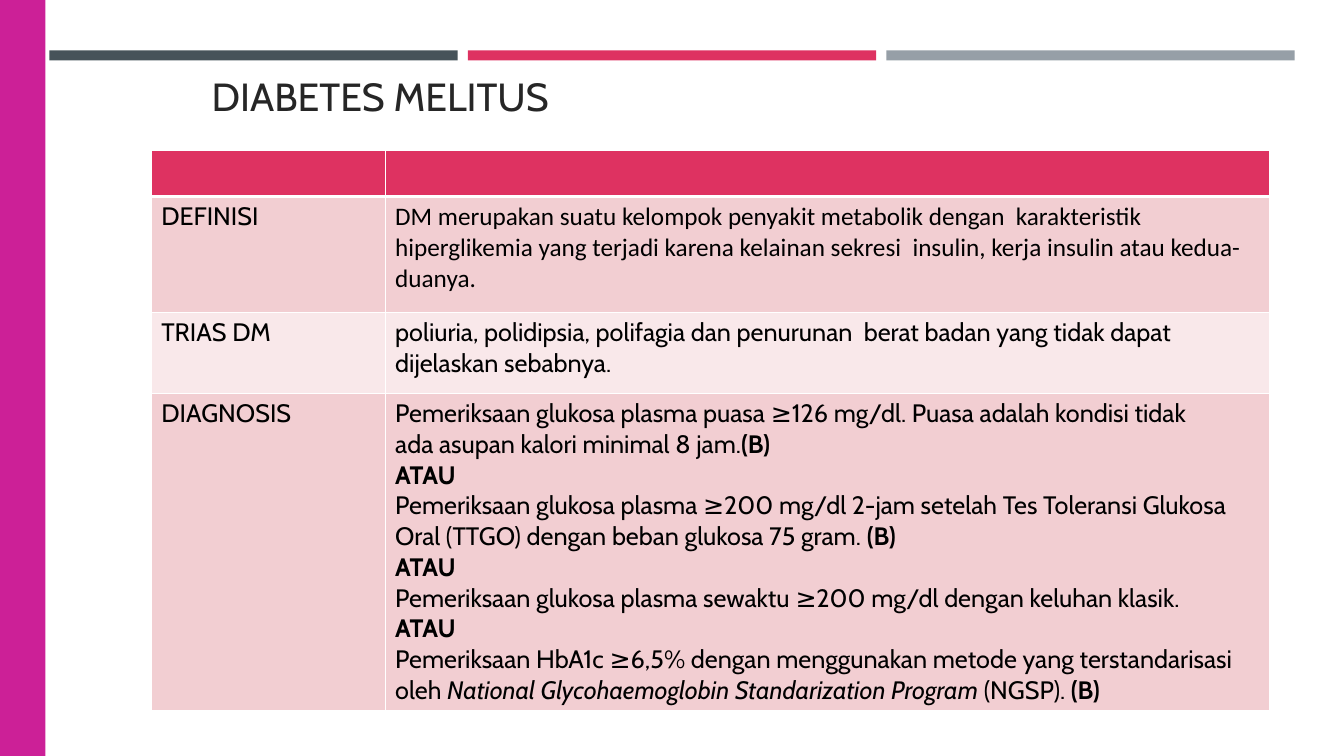
from pptx import Presentation
from pptx.dml.color import RGBColor
from pptx.enum.shapes import MSO_SHAPE as Shape
from pptx.enum.text import MSO_ANCHOR as Anchor, MSO_AUTO_SIZE as AutoSize, PP_ALIGN as Align
from pptx.oxml import parse_xml
from pptx.oxml.ns import nsdecls
from pptx.util import Inches, Pt

SLATE = RGBColor(0x46, 0x53, 0x59)
CRIMSON = RGBColor(0xDE, 0x32, 0x61)
GRAY = RGBColor(0x96, 0x9F, 0xA7)
MAGENTA = RGBColor(0xCC, 0x20, 0x97)
CHARCOAL = RGBColor(0x26, 0x26, 0x26)
BLACK = RGBColor(0, 0, 0)
ROSE = RGBColor(0xF2, 0xCE, 0xD2)
BLUSH = RGBColor(0xF9, 0xE8, 0xEA)

BOLD = {"bold": True}
ITALIC = {"italic": True}
CABIN = {"name": "Cabin", "size": Pt(18)}
CALIBRI = {"name": "Calibri", "size": Pt(18)}

COLUMN_WIDTHS = (2.32, 8.77)
ROW_HEIGHTS = (0.46, 1.15, 0.8, 3.15)
ROW_FILLS = (CRIMSON, ROSE, BLUSH, ROSE)

DEFINITION = [[(
    "DM merupakan suatu kelompok penyakit metabolik dengan  karakteristik "
    "hiperglikemia yang terjadi karena kelainan sekresi  insulin, kerja insulin "
    "atau kedua-duanya.", CALIBRI)]]
TRIAD = [[(
    "poliuria, polidipsia, polifagia dan penurunan  berat badan yang tidak dapat "
    "dijelaskan sebabnya.", {})]]
DIAGNOSIS = [
    [("Pemeriksaan glukosa plasma puasa ≥126 mg/dl. Puasa adalah kondisi tidak \n"
      "ada asupan kalori minimal 8 jam.", {}), ("(B)", BOLD)],
    [("ATAU", BOLD)],
    [("Pemeriksaan glukosa plasma ≥200 mg/dl 2-jam setelah Tes Toleransi Glukosa \n"
      "Oral (TTGO) dengan beban glukosa 75 gram. ", {}), ("(B) \nATAU", BOLD)],
    [("Pemeriksaan glukosa plasma sewaktu ≥200 mg/dl dengan keluhan klasik. \n", {}),
     ("ATAU", BOLD)],
    [("Pemeriksaan HbA1c ≥6,5% dengan menggunakan metode yang terstandarisasi \noleh ", {}),
     ("National Glycohaemoglobin Standarization Program ", ITALIC),
     ("(NGSP). ", {}), ("(B)", BOLD)],
]
ROWS = [
    ("DEFINISI", DEFINITION),
    ("TRIAS DM", TRIAD),
    ("DIAGNOSIS", DIAGNOSIS),
]


def apply_format(target, values):
    for name, value in values.items():
        setattr(target, name, value)


def add_bar(page, left, top, width, height, color):
    bar = page.shapes.add_shape(
        Shape.RECTANGLE, Inches(left), Inches(top), Inches(width), Inches(height))
    bar.shadow.inherit = False
    bar.fill.solid()
    bar.fill.fore_color.rgb = color
    bar.line.fill.background()


def set_title(page, text):
    title = page.shapes.title
    apply_format(title, {"left": Inches(2), "top": Inches(0.7),
                         "width": Inches(10.92), "height": Inches(0.79)})
    frame = title.text_frame
    apply_format(frame, {"text": text, "auto_size": AutoSize.NONE,
                         "vertical_anchor": Anchor.TOP, "margin_top": Inches(0.07)})
    para = frame.paragraphs[0]
    apply_format(para, {"alignment": Align.LEFT, "line_spacing": 0.9})
    apply_format(para.font, {"name": "Cabin", "size": Pt(28)})
    para.font.color.rgb = CHARCOAL


def add_span(para, text, style):
    for index, line in enumerate(text.split("\n")):
        if index:
            para.add_line_break()
        if line:
            span = para.add_run()
            span.text = line
            apply_format(span.font, {**CABIN, **style})
            span.font.color.rgb = BLACK


def write_cell(cell, paragraphs):
    frame = cell.text_frame
    for index, spans in enumerate(paragraphs):
        para = frame.add_paragraph() if index else frame.paragraphs[0]
        for text, style in spans:
            add_span(para, text, style)


def style_cell(cell, color, top, bottom):
    properties = cell._tc.get_or_add_tcPr()
    for side, width in (("L", 1), ("R", 1), ("T", top), ("B", bottom)):
        properties.append(parse_xml(
            f'<a:ln{side} {nsdecls("a")} w="{Pt(width)}"><a:solidFill>'
            f'<a:srgbClr val="FFFFFF"/></a:solidFill></a:ln{side}>'))
    cell.fill.solid()
    cell.fill.fore_color.rgb = color


def add_diabetes_table(page):
    table = page.shapes.add_table(
        len(ROW_HEIGHTS), len(COLUMN_WIDTHS), Inches(1.5), Inches(1.49),
        Inches(sum(COLUMN_WIDTHS)), Inches(sum(ROW_HEIGHTS))).table
    for column, width in zip(table.columns, COLUMN_WIDTHS):
        column.width = Inches(width)
    for index, (row, height, color) in enumerate(zip(table.rows, ROW_HEIGHTS, ROW_FILLS)):
        row.height = Inches(height)
        for cell in row.cells:
            style_cell(cell, color, 3 if index == 1 else 1, 3 if index == 0 else 1)
    for index, (label, paragraphs) in enumerate(ROWS, 1):
        write_cell(table.cell(index, 0), [[(label, {})]])
        write_cell(table.cell(index, 1), paragraphs)


def main():
    deck = Presentation()
    apply_format(deck, {"slide_width": Inches(13.33), "slide_height": Inches(7.5)})
    page = deck.slides.add_slide(deck.slide_layouts[5])
    for index, color in enumerate((SLATE, CRIMSON, GRAY)):
        add_bar(page, 0.49 + index * 4.15, 0.5, 4.05, 0.1, color)
    add_bar(page, 0, 0, 0.45, 7.5, MAGENTA)
    set_title(page, "DIABETES MELITUS")
    add_diabetes_table(page)
    deck.save("out.pptx")


if __name__ == "__main__":
    main()
